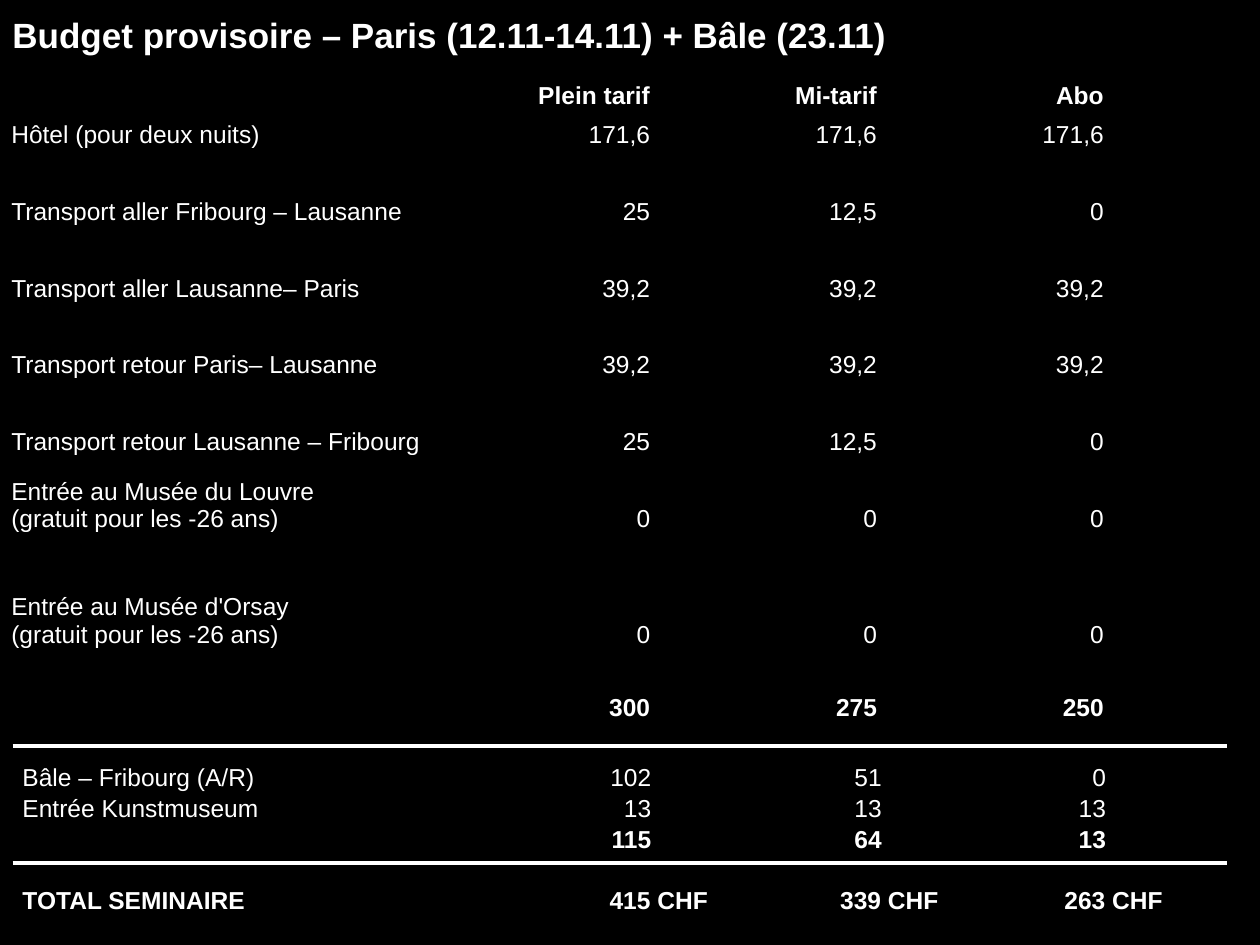
from lxml.etree import SubElement
from pptx import Presentation
from pptx.dml.color import RGBColor
from pptx.enum.shapes import MSO_CONNECTOR
from pptx.enum.text import MSO_ANCHOR, PP_ALIGN
from pptx.oxml.ns import qn
from pptx.util import Inches, Pt

WHITE, BLACK = "FFFFFF", "000000"
COLUMNS = [4.13, 0.96, 1.8, 1.8]
ROWS = [0.41, 0.31] + [0.61] * 5 + [0.92, 0.29, 0.29]
BUDGET = [
    ["", "Plein tarif", "Mi-tarif", "Abo"],
    ["Hôtel (pour deux nuits)", "171,6", "171,6", "171,6"],
    ["Transport aller Fribourg – Lausanne", "25", "12,5", "0"],
    ["Transport aller Lausanne– Paris", "39,2", "39,2", "39,2"],
    ["Transport retour Paris– Lausanne", "39,2", "39,2", "39,2"],
    ["Transport retour Lausanne – Fribourg", "25", "12,5", "0"],
    ["Entrée au Musée du Louvre\n(gratuit pour les -26 ans)", "0", "0", "0"],
    ["Entrée au Musée d'Orsay\n(gratuit pour les -26 ans)", "0", "0", "0"],
    ["", "", "", ""],
    ["", "300", "275", "250"],
]
BOLD_ROWS = (0, 9)
STOPS = [4.99, 6.82, 8.6]
CHF_WIDTH = 0.45
# text, bold, shift of the tab stops, space before
SUMMARY = [
    ("Bâle – Fribourg (A/R)\t102\t51\t0", False, 0, 0),
    ("Entrée Kunstmuseum\t13\t13\t13", False, 0, 0),
    ("\t115\t64\t13", True, 0, 0),
    ("TOTAL SEMINAIRE\t415 CHF\t339 CHF\t263 CHF", True, CHF_WIDTH, 17),
]


def rgb(color):
    return RGBColor.from_string(color)


def add_text(p, text, size=14, bold=False, color=WHITE, align=PP_ALIGN.LEFT):
    p.alignment = align
    r = p.add_run()
    r.text = text
    r.font.name = "Arial"
    r.font.size = Pt(size)
    r.font.bold = bold
    r.font.color.rgb = rgb(color)


def add_box(s, x, y, w, h):
    tf = s.shapes.add_textbox(Inches(x), Inches(y), Inches(w), Inches(h)).text_frame
    tf.word_wrap = True
    return tf


def set_tabs(p, stops):
    tabs = SubElement(p._p.get_or_add_pPr(), qn("a:tabLst"))
    for stop in stops:
        SubElement(tabs, qn("a:tab"), pos=str(Inches(stop)), algn="r")


def set_borders(cell, color):
    tcPr = cell._tc.get_or_add_tcPr()
    for side in ("a:lnL", "a:lnR", "a:lnT", "a:lnB"):
        ln = SubElement(tcPr, qn(side), w=str(Pt(1)))
        fill = SubElement(ln, qn("a:solidFill"))
        SubElement(fill, qn("a:srgbClr"), val=color)


def fill_cell(cell, text, bold, align):
    set_borders(cell, BLACK)
    cell.fill.background()
    cell.vertical_anchor = MSO_ANCHOR.BOTTOM
    cell.margin_left = cell.margin_right = cell.margin_top = Inches(0.01)
    cell.margin_bottom = 0
    tf = cell.text_frame
    if not text:
        SubElement(tf.paragraphs[0]._p, qn("a:endParaRPr"), sz="1400")
        return
    for i, line in enumerate(text.split("\n")):
        p = tf.add_paragraph() if i else tf.paragraphs[0]
        add_text(p, line, bold=bold, align=align)


def add_budget(s):
    table = s.shapes.add_table(
        len(ROWS), len(COLUMNS), Inches(0.08), Inches(0.46),
        Inches(sum(COLUMNS)), Inches(sum(ROWS))).table
    table.first_row = table.horz_banding = False
    for column, width in zip(table.columns, COLUMNS):
        column.width = Inches(width)
    for row, height in zip(table.rows, ROWS):
        row.height = Inches(height)
    for i, values in enumerate(BUDGET):
        for j, text in enumerate(values):
            align = PP_ALIGN.RIGHT if j else PP_ALIGN.LEFT
            fill_cell(table.cell(i, j), text, i in BOLD_ROWS, align)
    table.cell(8, 0).merge(table.cell(9, 0))


def add_summary(s):
    tf = add_box(s, 0.08, 5.99, 9.58, 1.45)
    for i, (text, bold, shift, before) in enumerate(SUMMARY):
        p = tf.add_paragraph() if i else tf.paragraphs[0]
        set_tabs(p, [stop + shift for stop in STOPS])
        p.line_spacing = 1.05
        if before:
            p.space_before = Pt(before)
        add_text(p, text, bold=bold)


def add_rule(s, y):
    line = s.shapes.add_connector(
        MSO_CONNECTOR.STRAIGHT, Inches(0.1), Inches(y), Inches(9.74), Inches(y))
    line.line.color.rgb = rgb(WHITE)
    line.line.width = Pt(2)
    SubElement(line._element.spPr, qn("a:effectLst"))


def main():
    prs = Presentation()
    prs.slide_width, prs.slide_height = Inches(10), Inches(7.5)
    s = prs.slides.add_slide(prs.slide_layouts[6])
    s.background.fill.solid()
    s.background.fill.fore_color.rgb = rgb(BLACK)
    add_budget(s)
    title = add_box(s, 0, 0.06, 9.11, 0.44)
    add_text(title.paragraphs[0], "Budget provisoire – Paris (12.11-14.11) + Bâle (23.11)",
             size=20, bold=True)
    add_summary(s)
    for y in (5.92, 6.85):
        add_rule(s, y)
    prs.save("out.pptx")


if __name__ == "__main__":
    main()
